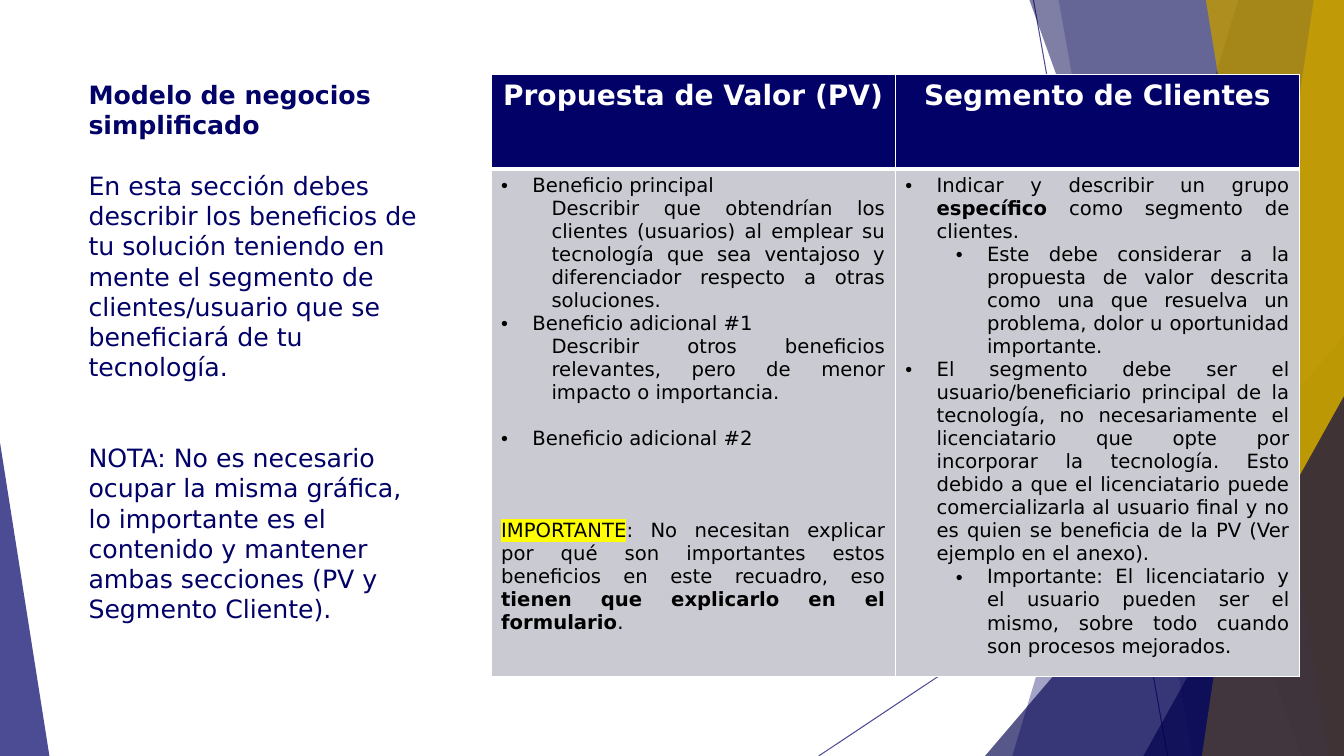
from lxml import etree
from pptx import Presentation
from pptx.dml.color import RGBColor
from pptx.enum.shapes import MSO_CONNECTOR, MSO_SHAPE
from pptx.enum.text import PP_ALIGN
from pptx.oxml.ns import qn
from pptx.util import Inches, Pt

STRAIGHT = MSO_CONNECTOR.STRAIGHT
TRIANGLE = MSO_SHAPE.ISOSCELES_TRIANGLE
LEFT, CENTER, JUSTIFY = PP_ALIGN.LEFT, PP_ALIGN.CENTER, PP_ALIGN.JUSTIFY

NAVY = RGBColor(0x01, 0x01, 0x68)
DARK_NAVY = RGBColor(0x00, 0x00, 0x4E)
GOLD = RGBColor(0xFF, 0xCD, 0x00)
DARK_GOLD = RGBColor(0xBF, 0x99, 0x00)
GREY = RGBColor(0xCA, 0xCA, 0xD2)
YELLOW = RGBColor(0xFF, 0xFF, 0x00)
BLACK = RGBColor(0, 0, 0)
WHITE = RGBColor(0xFF, 0xFF, 0xFF)

FONT = "DejaVu Sans"
WIDTH, HEIGHT = 13.33, 7.5

# Paragraph formats of the table body
ITEM = dict(indent=0.31, bullet=True)
DETAIL = dict(indent=0.5, level=1)
SUBITEM = dict(indent=0.81, bullet=True, level=1)
BODY_LINE = 16.4

BENEFITS = [
    ("Beneficio principal", ITEM),
    ("Describir que obtendrían los clientes (usuarios) al emplear su tecnología "
     "que sea ventajoso y diferenciador respecto a otras soluciones. ", DETAIL),
    ("Beneficio adicional #1", ITEM),
    ("Describir otros beneficios relevantes, pero de menor impacto o "
     "importancia.", DETAIL),
    ("Beneficio adicional #2", dict(ITEM, before=BODY_LINE)),
    ([("IMPORTANTE", dict(highlight=YELLOW)),
      (": No necesitan explicar por qué son importantes estos beneficios en "
       "este recuadro, eso ", {}),
      ("tienen que explicarlo en el formulario", dict(bold=True)),
      (".", {})], dict(before=3 * BODY_LINE)),
]
SEGMENT = [
    ([("Indicar y describir un grupo ", {}),
      ("específico", dict(bold=True)),
      (" como segmento de clientes. ", {})], ITEM),
    ("Este debe considerar a la propuesta de valor descrita como una que "
     "resuelva un problema, dolor u oportunidad importante.", SUBITEM),
    ("El segmento debe ser el usuario/beneficiario principal de la tecnología, "
     "no necesariamente el licenciatario que opte por incorporar la tecnología. "
     "Esto debido a que el licenciatario puede comercializarla al usuario final "
     "y no es quien se beneficia de la PV (Ver ejemplo en el anexo).", ITEM),
    ("Importante: El licenciatario y el usuario pueden ser el mismo, sobre todo "
     "cuando son procesos mejorados.", SUBITEM),
]


def set_alpha(fill_parent, percent):
    color = fill_parent.find(".//" + qn("a:srgbClr"))
    etree.SubElement(color, qn("a:alpha"), val=str(percent * 1000))


def paint(s, color, alpha):
    s.shadow.inherit = False
    s.fill.solid()
    s.fill.fore_color.rgb = color
    s.line.fill.background()
    set_alpha(s._element.spPr, alpha)


def add_line(slide, x1, y1, x2, y2):
    c = slide.shapes.add_connector(STRAIGHT, Inches(x1), Inches(y1),
                                   Inches(x2), Inches(y2))
    c.line.color.rgb = NAVY
    c.line.width = Pt(0.75)
    set_alpha(c._element.spPr, 70)
    etree.SubElement(c._element.spPr, qn("a:effectLst"))


def add_band(slide, top_x, bottom_x, color, alpha):
    """Full-height band from a slanted left edge to the right slide edge."""
    fb = slide.shapes.build_freeform(Inches(top_x), 0)
    fb.add_line_segments([(Inches(x), Inches(y)) for x, y in
                          ((WIDTH, 0), (WIDTH, HEIGHT), (bottom_x, HEIGHT))])
    paint(fb.convert_to_shape(), color, alpha)


def add_triangle(slide, x, y, w, apex, color, alpha):
    """Right triangle standing on the bottom slide edge."""
    s = slide.shapes.add_shape(TRIANGLE, Inches(x), Inches(y),
                               Inches(w), Inches(HEIGHT - y))
    s.adjustments[0] = apex
    paint(s, color, alpha)


def add_run(p, text, size=14, color=BLACK, bold=False, highlight=None):
    r = p.add_run()
    r.text = text
    r.font.size = Pt(size)
    r.font.name = FONT
    r.font.bold = bold
    r.font.color.rgb = color
    if highlight is not None:
        mark = etree.Element(qn("a:highlight"))
        etree.SubElement(mark, qn("a:srgbClr"), val=str(highlight))
        r.font._element.find(qn("a:solidFill")).addnext(mark)


def add_text(tf, text, align=JUSTIFY, indent=0, bullet=False, level=0,
             before=0, **font):
    """Add a paragraph; text is a string or a list of (string, format) runs."""
    p = tf.paragraphs[0]
    if p.runs:
        p = tf.add_paragraph()
    p.alignment = align
    p.level = level
    p.space_before = Pt(before)
    pPr = p._p.get_or_add_pPr()
    pPr.set("marL", str(Inches(indent)))
    pPr.set("indent", str(Inches(-0.31 if bullet else 0)))
    if bullet:
        etree.SubElement(pPr, qn("a:buFont"), typeface="Arial")
        etree.SubElement(pPr, qn("a:buChar"), char="•")
    else:
        etree.SubElement(pPr, qn("a:buNone"))
    for part, extra in [(text, {})] if isinstance(text, str) else text:
        add_run(p, part, **{**font, **extra})


def set_cell(cell, fill, bottom_width=1):
    cell.fill.solid()
    cell.fill.fore_color.rgb = fill
    tcPr = cell._tc.get_or_add_tcPr()
    for i, side in enumerate("LRTB"):
        width = bottom_width if side == "B" else 1
        ln = etree.Element(qn("a:ln" + side), w=str(Pt(width)))
        color = etree.SubElement(ln, qn("a:solidFill"))
        etree.SubElement(color, qn("a:srgbClr"), val=str(WHITE))
        tcPr.insert(i, ln)


def add_background(slide):
    add_line(slide, 10.25, 0, 11.58, HEIGHT)
    add_line(slide, WIDTH, 4.03, 8.12, HEIGHT)
    add_band(slide, 12.28, 10.04, NAVY, 36)
    add_band(slide, 10.5, 11.83, NAVY, 20)
    add_triangle(slide, 9.77, 3.33, 3.56, 1, DARK_NAVY, 66)
    add_band(slide, 10.21, 12.91, DARK_NAVY, 50)
    add_band(slide, 13.03, 11.92, GOLD, 70)
    add_band(slide, 11.96, 13.18, DARK_GOLD, 80)
    add_triangle(slide, 11.34, 3.93, 1.99, 1, DARK_NAVY, 66)
    add_triangle(slide, 0, 4.39, 0.49, 0, NAVY, 70)


def add_intro(slide):
    tf = slide.shapes.add_textbox(Inches(0.78), Inches(0.74),
                                  Inches(3.46), Inches(5.97)).text_frame
    tf.word_wrap = True
    style = dict(align=LEFT, size=18, color=NAVY)
    add_text(tf, "Modelo de negocios simplificado", bold=True, **style)
    add_text(tf, "En esta sección debes describir los beneficios de tu solución "
             "teniendo en mente el segmento de clientes/usuario que se "
             "beneficiará de tu tecnología.", before=21.6, **style)
    add_text(tf, "NOTA: No es necesario ocupar la misma gráfica, lo importante "
             "es el contenido y mantener ambas secciones (PV y Segmento "
             "Cliente).", before=43.2, **style)


def add_model_table(slide):
    table = slide.shapes.add_table(2, 2, Inches(4.87), Inches(0.74),
                                   Inches(8.02), Inches(5.97)).table
    table.rows[0].height = Inches(0.94)
    table.rows[1].height = Inches(5.03)
    columns = [("Propuesta de Valor (PV)", BENEFITS),
               ("Segmento de Clientes", SEGMENT)]
    for i, (heading, body) in enumerate(columns):
        head, content = table.cell(0, i), table.cell(1, i)
        set_cell(head, NAVY, bottom_width=3)
        add_text(head.text_frame, heading, align=CENTER, size=20,
                 color=WHITE, bold=True)
        set_cell(content, GREY)
        for text, style in body:
            add_text(content.text_frame, text, **style)


def main():
    prs = Presentation()
    prs.slide_width, prs.slide_height = Inches(WIDTH), Inches(HEIGHT)
    slide = prs.slides.add_slide(prs.slide_layouts[6])
    add_background(slide)
    add_intro(slide)
    add_model_table(slide)
    prs.save("out.pptx")


if __name__ == "__main__":
    main()
